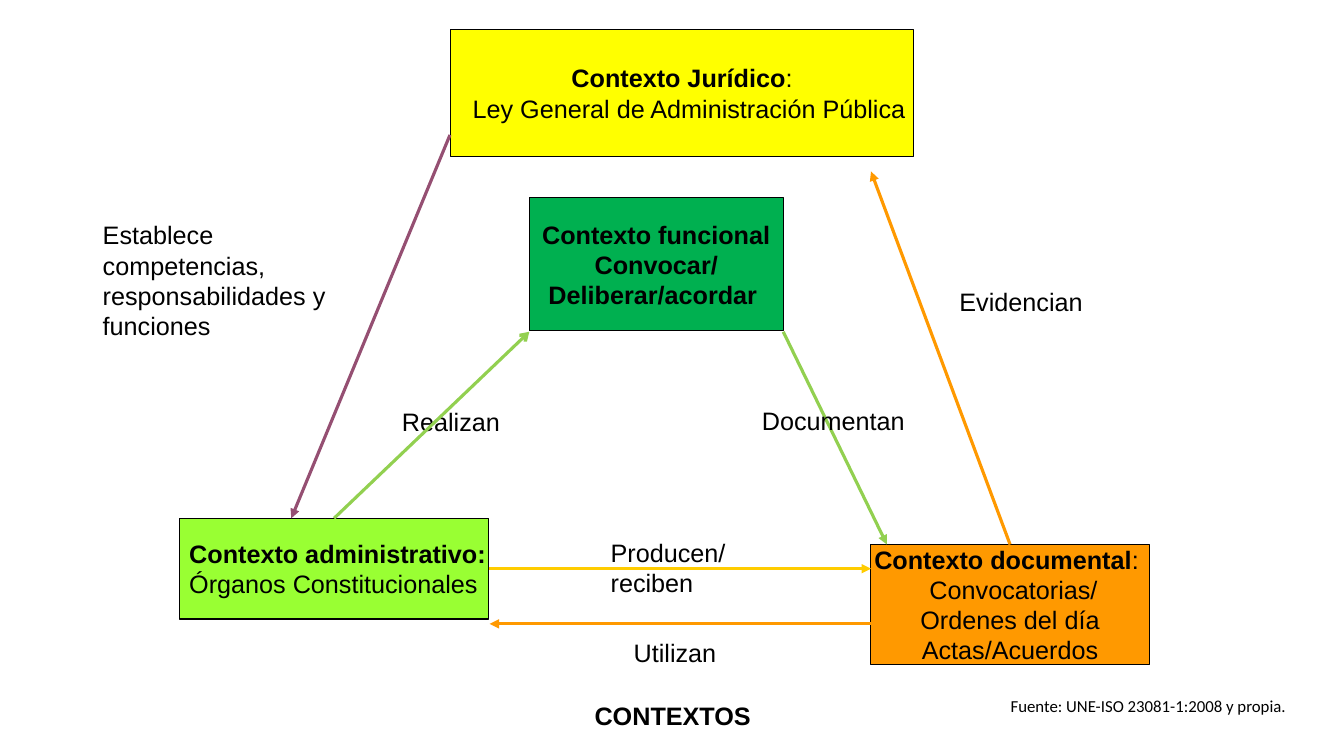
"""Build the diagram of legal, functional, administrative and documentary contexts."""
from dataclasses import dataclass

import pptx
import pptx.dml.color
import pptx.enum.shapes
import pptx.enum.text
import pptx.oxml
import pptx.oxml.ns
import pptx.util
from pptx.util import Cm

PP_ALIGN = pptx.enum.text.PP_ALIGN
ANCHOR = pptx.enum.text.MSO_ANCHOR
AUTO_SIZE = pptx.enum.text.MSO_AUTO_SIZE
TOP, RIGHT = 0, 3


@dataclass(frozen=True)
class Theme:
    """Colours, fonts and sizes of the slide."""
    ink: str = "000000"
    legal: str = "FFFF00"
    functional: str = "00B050"
    administrative: str = "99FF33"
    documentary: str = "FF9900"
    establishes: str = "954F72"
    produces: str = "FFCC00"
    performs: str = "92D050"
    font: str = "Arial"
    source_font: str = "Calibri"
    size: int = 18
    source_size: int = 12
    outline: float = 0.75
    arrow: float = 2.25


THEME = Theme()


def rgb(colour):
    """Turn a hex string into a colour."""
    return pptx.dml.color.RGBColor.from_string(colour)


def write(frame, lines, align=PP_ALIGN.LEFT, font=THEME.font, size=THEME.size):
    """Write lines, each a list of (text, bold) runs."""
    for index, runs in enumerate(lines):
        paragraph = frame.add_paragraph() if index else frame.paragraphs[0]
        paragraph.alignment = align
        paragraph.font.name = font
        paragraph.font.size = pptx.util.Pt(size)
        paragraph.font.color.rgb = rgb(THEME.ink)
        mixed = len({bold for _, bold in runs}) > 1
        if not mixed:
            paragraph.font.bold = runs[0][1]
        for text, bold in runs:
            run = paragraph.add_run()
            run.text = text
            if mixed:
                run.font.bold = bold


def add_context(slide, place, fill, lines, align=PP_ALIGN.CENTER):
    """Add a filled box that names one context."""
    context = slide.shapes.add_shape(
        pptx.enum.shapes.MSO_SHAPE.RECTANGLE, *map(Cm, place))
    context.shadow.inherit = False
    context.fill.solid()
    context.fill.fore_color.rgb = rgb(fill)
    context.line.color.rgb = rgb(THEME.ink)
    context.line.width = pptx.util.Pt(THEME.outline)
    context.text_frame.word_wrap = False
    context.text_frame.vertical_anchor = ANCHOR.MIDDLE
    write(context.text_frame, lines, align)
    return context


def add_label(slide, place, *lines, wrap=False, **style):
    """Add a plain text label."""
    frame = slide.shapes.add_textbox(*map(Cm, place)).text_frame
    frame.word_wrap = wrap
    frame.auto_size = AUTO_SIZE.SHAPE_TO_FIT_TEXT
    write(frame, [[(line, False)] for line in lines], **style)


def add_relation(slide, start, end, colour, source=None, head="triangle"):
    """Add an arrow, joined to a (context, side) source if one is given."""
    relation = slide.shapes.add_connector(
        pptx.enum.shapes.MSO_CONNECTOR.STRAIGHT, *map(Cm, start + end))
    if source:
        relation.begin_connect(*source)
    relation.line.color.rgb = rgb(colour)
    relation.line.width = pptx.util.Pt(THEME.arrow)
    outline = relation.line._get_or_add_ln()
    outline.append(pptx.oxml.parse_xml(
        f'<a:tailEnd {pptx.oxml.ns.nsdecls("a")} type="{head}"/>'))
    outline.addnext(pptx.oxml.parse_xml(
        f'<a:effectLst {pptx.oxml.ns.nsdecls("a")}/>'))


def set_title(slide, place, text):
    """Move and format the title placeholder."""
    title = slide.shapes.title
    title.left, title.top, title.width, title.height = map(Cm, place)
    frame = title.text_frame
    frame.word_wrap = False
    frame.auto_size = AUTO_SIZE.SHAPE_TO_FIT_TEXT
    frame.vertical_anchor = ANCHOR.TOP
    write(frame, [[(text, True)]])


def main():
    """Build and save the slide."""
    deck = pptx.Presentation()
    deck.slide_width, deck.slide_height = Cm(33.87), Cm(19.05)
    slide = deck.slides.add_slide(deck.slide_layouts.get_by_name("Title Only"))
    set_title(slide, (14.73, 17.53, 4.47, 1.02), "CONTEXTOS")

    legal = add_context(slide, (11.35, 0.74, 11.68, 3.2), THEME.legal, [
        [("Contexto Jurídico", True), (":", False)],
        [("Ley General de Administración Pública", False)]])
    law = legal.text_frame.paragraphs[1]
    law._p.get_or_add_pPr().set("marL", str(Cm(0.35)))
    administrative = add_context(
        slide, (4.52, 13.06, 7.8, 2.54), THEME.administrative, [
            [("Contexto administrativo:", True)],
            [("Órganos Constitucionales", False)]], PP_ALIGN.LEFT)
    add_context(slide, (13.34, 4.98, 6.4, 3.36), THEME.functional, [
        [("Contexto funcional", True)],
        [("Convocar/", True)],
        [("Deliberar/acordar ", True)]])
    documentary = add_context(
        slide, (21.95, 13.72, 7.01, 3.02), THEME.documentary, [
            [("Contexto documental", True), (": ", False)],
            [(" Convocatorias/", False)],
            [("Ordenes del día", False)],
            [("Actas/Acuerdos", False)]])

    add_relation(slide, (11.34, 3.4), (7.34, 13.06), THEME.establishes)
    add_label(slide, (2.34, 5.41, 6.6, 3.33),
              "Establece competencias, responsabilidades y funciones", wrap=True)
    add_label(slide, (9.88, 10.11, 2.97, 1.02), "Realizan")
    add_relation(slide, (12.32, 14.33), (21.95, 14.33), THEME.produces,
                 (administrative, RIGHT))
    add_label(slide, (15.14, 13.41, 3.4, 1.78), "Producen/", "reciben")
    add_relation(slide, (25.46, 13.72), (21.95, 4.32), THEME.documentary,
                 (documentary, TOP))
    add_label(slide, (23.93, 7.09, 3.78, 1.02), "Evidencian")
    add_label(slide, (15.72, 15.93, 2.59, 1.02), "Utilizan")
    add_relation(slide, (21.95, 15.72), (12.34, 15.72), THEME.documentary)
    add_relation(slide, (8.42, 13.06), (13.34, 8.36), THEME.performs,
                 (administrative, TOP), "arrow")
    add_relation(slide, (19.74, 8.36), (22.35, 13.72), THEME.performs)
    add_label(slide, (18.95, 10.08, 4.39, 1.02), "Documentan", wrap=True)
    add_label(slide, (25.22, 17.4, 7.59, 0.76),
              "Fuente: UNE-ISO 23081-1:2008 y propia.", wrap=True,
              font=THEME.source_font, size=THEME.source_size)
    deck.save("out.pptx")


if __name__ == "__main__":
    main()
